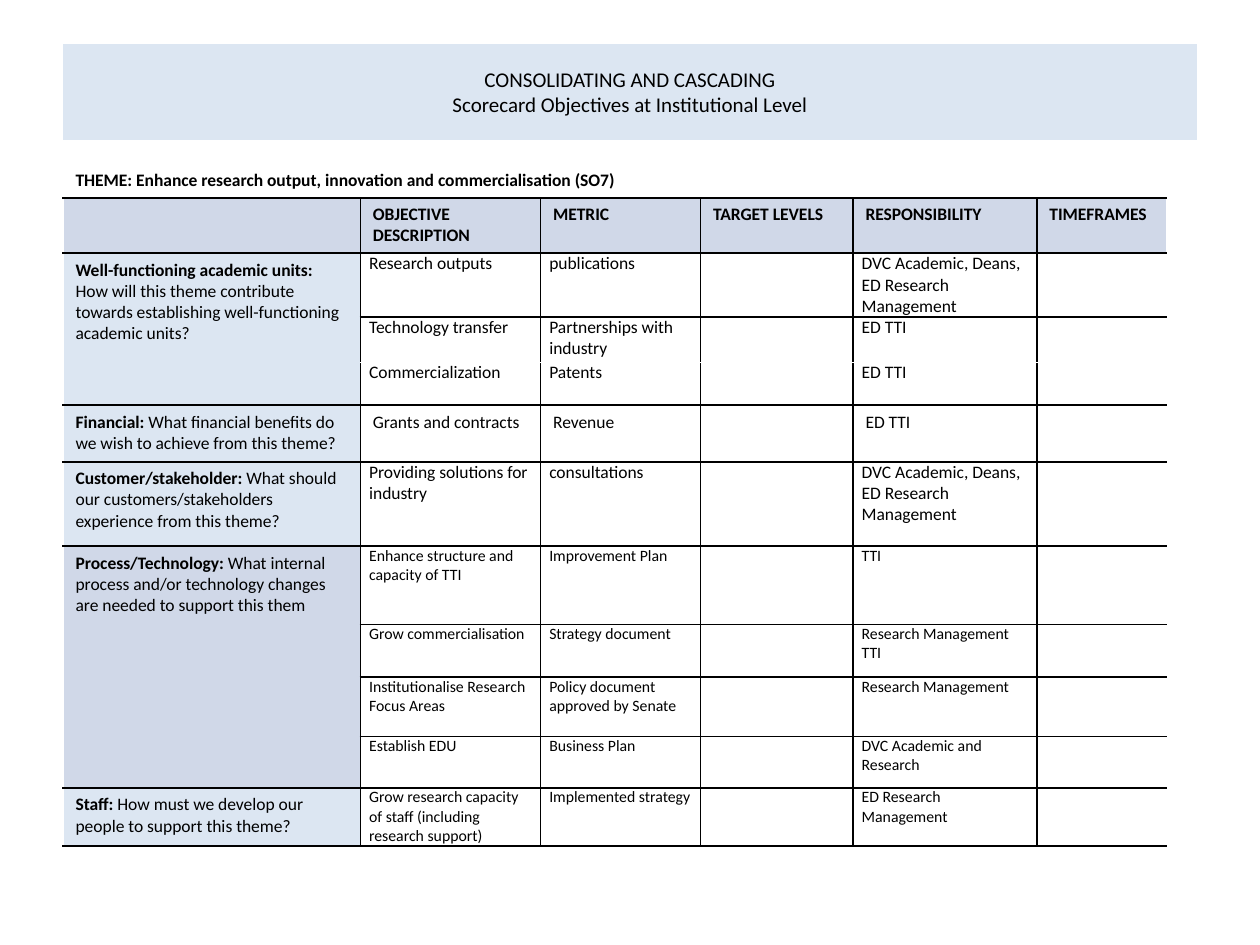
from dataclasses import dataclass

from lxml import etree
from pptx import Presentation
from pptx.dml.color import RGBColor
from pptx.enum import text
from pptx.oxml import ns
from pptx.util import Inches, Pt

COLORS = {"black": "000000", "white": "FFFFFF", "pale": "DCE6F2", "blue": "D0D8E8"}
FONT = "Calibri"
COLUMN_WIDTHS = [2.36, 1.43, 1.27, 1.21, 1.46, 1.03]
ROW_HEIGHTS = [0.43, 0.44, 0.5, 0.36, 0.34, 0.45, 0.67, 0.62, 0.42, 0.47, 0.41, 0.46]
HEADERS = ["", "OBJECTIVE DESCRIPTION", "METRIC", "TARGET LEVELS",
           "RESPONSIBILITY", "TIMEFRAMES"]
THEME = "THEME: Enhance research output, innovation and commercialisation (SO7)"
NORMAL_MARGINS = (0.1, 0.05)
TIGHT_MARGINS = (0.07, 0)
LAST_COLUMN = len(COLUMN_WIDTHS) - 1


@dataclass
class Objective:
    description: str
    metric: str
    responsibility: str


@dataclass
class Section:
    label: str
    question: str
    objectives: list[Objective]
    fill: str = "pale"
    size: float = 10
    margins: tuple[float, float] = TIGHT_MARGINS


SECTIONS = [
    Section(
        "Well-functioning academic units: ",
        "How will this theme contribute towards establishing "
        "well-functioning academic units?",
        [Objective("Research outputs", "publications",
                   "DVC Academic, Deans, ED Research Management"),
         Objective("Technology transfer", "Partnerships with industry", "ED TTI"),
         Objective("Commercialization", "Patents", "ED TTI")]),
    Section(
        "Financial: ", "What financial benefits do we wish to achieve from this theme?",
        [Objective("Grants and contracts", "Revenue", "ED TTI")],
        margins=NORMAL_MARGINS),
    Section(
        "Customer/stakeholder: ",
        "What should our customers/stakeholders experience from this theme?",
        [Objective("Providing solutions for industry", "consultations",
                   "DVC Academic, Deans, ED Research Management")]),
    Section(
        "Process/Technology: ",
        "What internal process and/or technology changes are needed to support this them",
        [Objective("Enhance structure and capacity of TTI", "Improvement Plan", "TTI"),
         Objective("Grow commercialisation", "Strategy document",
                   "Research Management\nTTI"),
         Objective("Institutionalise Research Focus Areas",
                   "Policy document approved by Senate", "Research Management"),
         Objective("Establish EDU", "Business Plan", "DVC Academic and Research")],
        fill="blue", size=9),
    Section(
        "Staff: ", "How must we develop our people to support this theme?",
        [Objective("Grow research capacity of staff (including research support)",
                   "Implemented strategy", "ED Research Management")],
        size=9),
]


def rgb(name: str) -> RGBColor:
    return RGBColor.from_string(COLORS[name])


def format_run(run, size: float, bold: bool = False) -> None:
    run.font.name = FONT
    run.font.size = Pt(size)
    run.font.bold = bold
    run.font.color.rgb = rgb("black")


def set_margins(cell, margins: tuple[float, float]) -> None:
    cell.margin_left = cell.margin_right = Inches(margins[0])
    cell.margin_top = cell.margin_bottom = Inches(margins[1])


def write_cell(cell, content: str, size: float = 10, bold: bool = False,
               margins: tuple[float, float] = NORMAL_MARGINS) -> None:
    set_margins(cell, margins)
    cell.text_frame.text = content
    for paragraph in cell.text_frame.paragraphs:
        for run in paragraph.runs:
            format_run(run, size, bold)


def fill_cell(cell, color: str) -> None:
    cell.fill.solid()
    cell.fill.fore_color.rgb = rgb(color)


def border_colors(row: int, column: int) -> dict[str, str]:
    """Edges that stay open are white: the outer sides, the theme row, one row pair."""
    theme = row == 0
    open_top = theme or (row == 4 and column > 0)
    open_bottom = row in (2, 3) and column == 0 or row == 3
    return {
        "lnL": "white" if theme or column == 0 else "black",
        "lnR": "white" if theme or column == LAST_COLUMN else "black",
        "lnT": "white" if open_top else "black",
        "lnB": "white" if open_bottom else "black",
    }


def draw_borders(cell, colors: dict[str, str]) -> None:
    properties = cell._tc.get_or_add_tcPr()
    for index, (edge, color) in enumerate(colors.items()):
        line = etree.Element(ns.qn(f"a:{edge}"), w=str(Pt(1)))
        solid = etree.SubElement(line, ns.qn("a:solidFill"))
        etree.SubElement(solid, ns.qn("a:srgbClr"), val=COLORS[color])
        properties.insert(index, line)


def add_title(slide) -> None:
    title = slide.shapes.title
    title.left, title.top = Inches(0.5), Inches(0.35)
    title.width, title.height = Inches(9), Inches(0.76)
    title.fill.solid()
    title.fill.fore_color.rgb = rgb("pale")
    frame = title.text_frame
    frame.text = "CONSOLIDATING AND CASCADING\vScorecard Objectives at Institutional Level"
    frame.vertical_anchor = text.MSO_ANCHOR.MIDDLE
    paragraph = frame.paragraphs[0]
    paragraph.alignment = text.PP_ALIGN.CENTER
    for run in paragraph.runs:
        format_run(run, 12)


def add_section(table, section: Section, first_row: int) -> None:
    last_row = first_row + len(section.objectives) - 1
    heading = table.cell(first_row, 0)
    if last_row > first_row:
        heading.merge(table.cell(last_row, 0))
    for row in range(first_row, last_row + 1):
        fill_cell(table.cell(row, 0), section.fill)
    write_cell(heading, section.label, bold=True)
    question = heading.text_frame.paragraphs[0].add_run()
    question.text = section.question
    format_run(question, 10)
    for row, objective in enumerate(section.objectives, first_row):
        contents = {1: objective.description, 2: objective.metric,
                    4: objective.responsibility}
        for column, content in contents.items():
            write_cell(table.cell(row, column), content, section.size,
                       margins=section.margins)


def add_scorecard(slide) -> None:
    frame = slide.shapes.add_table(
        len(ROW_HEIGHTS), len(COLUMN_WIDTHS), Inches(0.5), Inches(1.14),
        Inches(sum(COLUMN_WIDTHS)), Inches(sum(ROW_HEIGHTS)))
    table = frame.table
    table.first_row = table.horz_banding = False
    for column, width in zip(table.columns, COLUMN_WIDTHS):
        column.width = Inches(width)
    for row_index, height in enumerate(ROW_HEIGHTS):
        table.rows[row_index].height = Inches(height)
        for column_index in range(len(COLUMN_WIDTHS)):
            cell = table.cell(row_index, column_index)
            set_margins(cell, TIGHT_MARGINS)
            cell.fill.background()
            draw_borders(cell, border_colors(row_index, column_index))

    theme = table.cell(0, 0)
    theme.merge(table.cell(0, LAST_COLUMN))
    theme.vertical_anchor = text.MSO_ANCHOR.BOTTOM
    write_cell(theme, THEME, bold=True)
    for column_index, header in enumerate(HEADERS):
        cell = table.cell(1, column_index)
        fill_cell(cell, "blue")
        write_cell(cell, header, bold=True)
    first_row = 2
    for section in SECTIONS:
        add_section(table, section, first_row)
        first_row += len(section.objectives)


def main() -> None:
    presentation = Presentation()
    presentation.slide_width, presentation.slide_height = Inches(10), Inches(7.5)
    slide = presentation.slides.add_slide(presentation.slide_layouts[5])
    add_title(slide)
    add_scorecard(slide)
    presentation.save("out.pptx")


if __name__ == "__main__":
    main()
